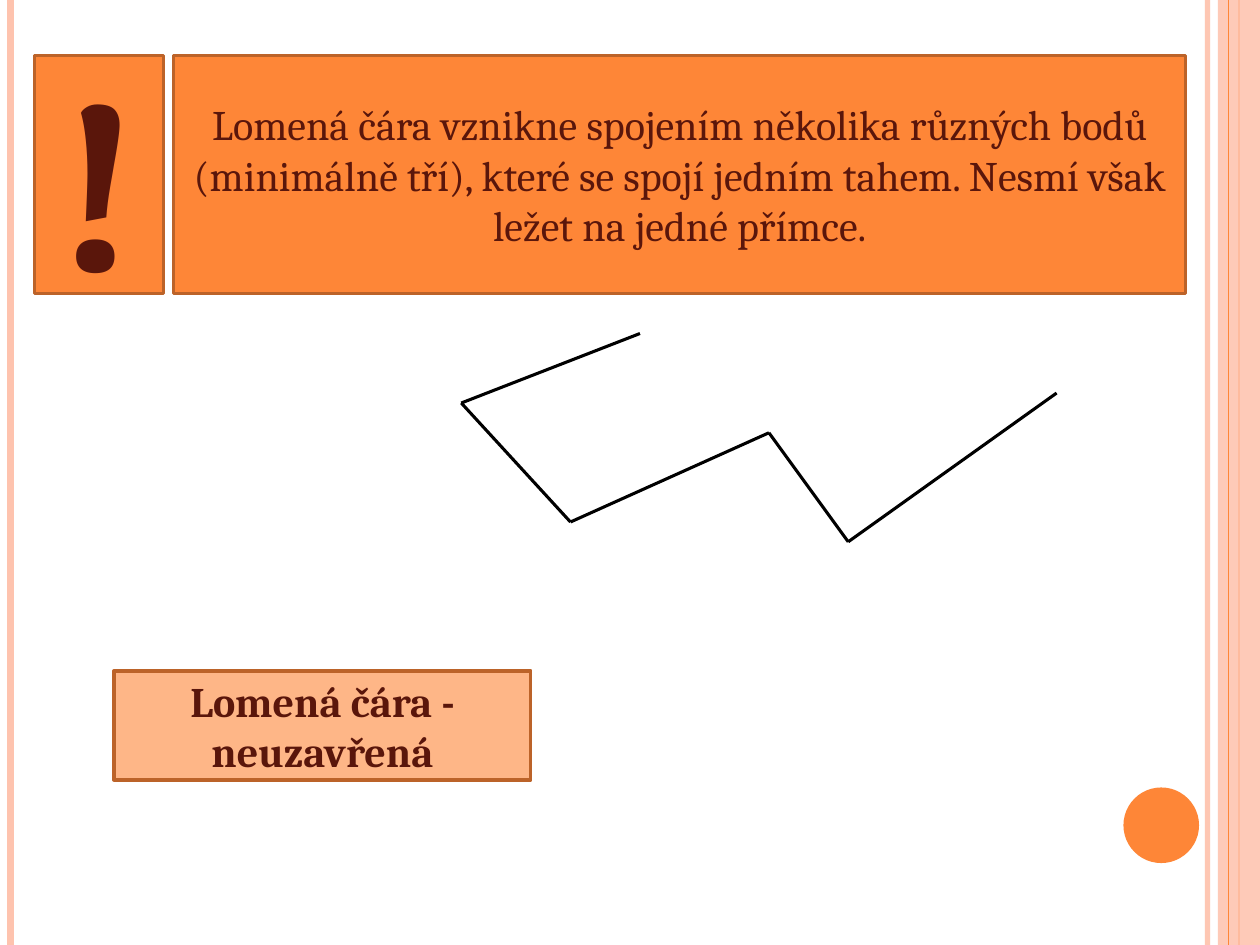
from itertools import pairwise

from lxml import etree
from pptx import Presentation
from pptx.dml.color import RGBColor
from pptx.enum.shapes import MSO_CONNECTOR, MSO_SHAPE
from pptx.enum.text import MSO_ANCHOR, PP_ALIGN
from pptx.oxml.ns import qn
from pptx.util import Pt

STRAIGHT = MSO_CONNECTOR.STRAIGHT
RECTANGLE, OVAL = MSO_SHAPE.RECTANGLE, MSO_SHAPE.OVAL
MIDDLE, CENTER = MSO_ANCHOR.MIDDLE, PP_ALIGN.CENTER

WIDTH, HEIGHT = 720, 540
COLORS = {
    "stripe": "FEC3AE",
    "orange": "FE8637",
    "light": "FEB687",
    "border": "BC6329",
    "text": "5A160B",
    "black": "000000",
}


class SlideBuilder:
    """Draws the elements of one slide in a shared style, in points."""

    def __init__(self, slide, font="Cambria"):
        self.shapes = slide.shapes
        self.font = font

    def paint(self, fill, color, opacity=100):
        fill.solid()
        fill.fore_color.rgb = RGBColor.from_string(COLORS[color])
        if opacity < 100:
            choice = fill._xPr.find(qn("a:solidFill"))[0]
            etree.SubElement(choice, qn("a:alpha"), val=str(opacity * 1000))

    def line(self, start, end, color, weight, opacity=100):
        ends = [Pt(value) for value in (*start, *end)]
        connector = self.shapes.add_connector(STRAIGHT, *ends)
        connector.line.width = Pt(weight)
        self.paint(connector.line.fill, color, opacity)
        etree.SubElement(connector._element.spPr, qn("a:effectLst"))

    def stripe(self, x, color, weight, opacity=100):
        self.line((x, 0), (x, HEIGHT), color, weight, opacity)

    def broken_line(self, points):
        for start, end in pairwise(points):
            self.line(start, end, "black", 1.75)

    def shape(self, kind, bounds, color, opacity=100):
        shape = self.shapes.add_shape(kind, *[Pt(value) for value in bounds])
        shape.shadow.inherit = False
        self.paint(shape.fill, color, opacity)
        shape.line.fill.background()
        return shape

    def text_box(self, bounds, color, text, size=24, bold=False):
        box = self.shape(RECTANGLE, bounds, color)
        self.paint(box.line.fill, "border")
        box.line.width = Pt(2)
        frame = box.text_frame
        frame.word_wrap = True
        frame.vertical_anchor = MIDDLE
        para = frame.paragraphs[0]
        para.alignment = CENTER
        span = para.add_run()
        span.text = text
        span.font.name = self.font
        span.font.size = Pt(size)
        span.font.bold = bold
        span.font.color.rgb = RGBColor.from_string(COLORS["text"])


def main():
    deck = Presentation()
    deck.slide_width, deck.slide_height = Pt(WIDTH), Pt(HEIGHT)
    page = SlideBuilder(deck.slides.add_slide(deck.slide_layouts[6]))

    page.stripe(690, "stripe", 3, opacity=93)
    page.stripe(6, "stripe", 4.5)
    page.stripe(708, "orange", 1.5)
    page.shape(RECTANGLE, (696, 0, 24, HEIGHT), "stripe", opacity=87)
    page.stripe(702, "orange", 0.75)
    page.shape(OVAL, (642, 450, 43.2, 43.2), "orange")

    top, height = 31.7, 136.1
    page.text_box((19.8, top, 73.7, height), "orange", "!", size=138, bold=True)
    page.text_box(
        (99.2, top, 578.3, height),
        "orange",
        "Lomená čára vznikne spojením několika různých bodů (minimálně tří), "
        "které se spojí jedním tahem. Nesmí však ležet na jedné přímce.",
    )
    page.broken_line([
        (365.7, 190.6),
        (263.6, 230.3),
        (326, 298.3),
        (439.4, 247.3),
        (484.7, 309.6),
        (603.8, 224.6),
    ])
    page.text_box((65.2, 383.3, 238.1, 62.4), "light",
                  "Lomená čára - neuzavřená", bold=True)
    deck.save("out.pptx")


if __name__ == "__main__":
    main()
